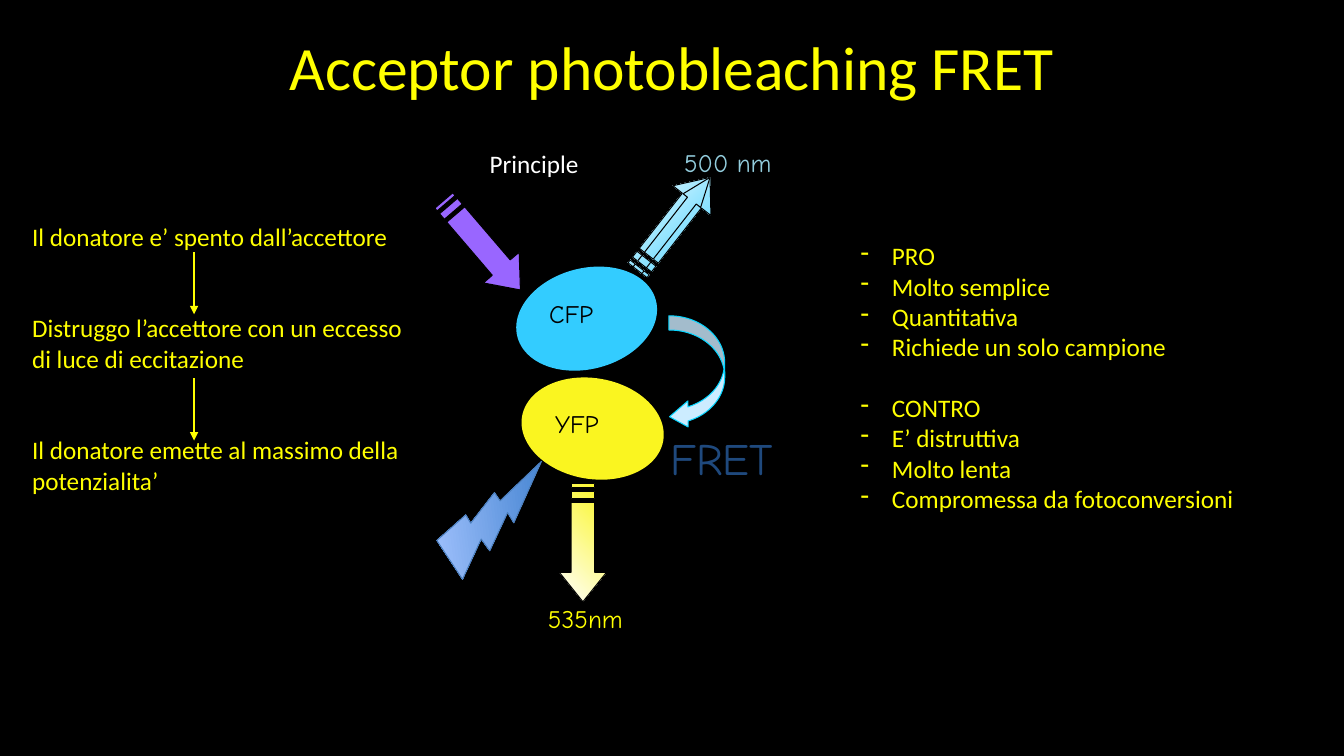
from lxml.etree import SubElement
from pptx import Presentation
from pptx.dml.color import RGBColor
from pptx.enum.shapes import MSO_CONNECTOR, MSO_SHAPE
from pptx.enum.text import PP_ALIGN
from pptx.oxml.ns import qn
from pptx.util import Cm, Pt

BLACK = RGBColor(0x00, 0x00, 0x00)
WHITE = RGBColor(0xFF, 0xFF, 0xFF)
YELLOW = RGBColor(0xFF, 0xFF, 0x00)
YFP_YELLOW = RGBColor(0xFA, 0xF5, 0x20)
CFP_CYAN = RGBColor(0x33, 0xCC, 0xFF)
PALE_CYAN = RGBColor(0xCC, 0xEC, 0xFF)
EDGE_CYAN = RGBColor(0x07, 0xD5, 0xFF)
EMISSION_CYAN = RGBColor(0x93, 0xCD, 0xDD)
VIOLET = RGBColor(0x99, 0x66, 0xFF)
NAVY = RGBColor(0x1F, 0x49, 0x7D)
BOLT_DARK = RGBColor(0x3F, 0x80, 0xCE)
BOLT_LIGHT = RGBColor(0xA4, 0xC4, 0xFF)
BOLT_EDGE = RGBColor(0x4B, 0x7E, 0xBC)
BODY_FONT = "Calibri"
LABEL_FONT = "Comic Neue"
BLANK_LINE = 22  # points taken by one line of 18 pt text

STEPS = [
    "Il donatore e’ spento dall’accettore",
    "Distruggo l’accettore con un eccesso di luce di eccitazione",
    "Il donatore emette al massimo della potenzialita’",
]
PROS = ["PRO", "Molto semplice", "Quantitativa", "Richiede un solo campione"]
CONS = ["CONTRO", "E’ distruttiva", "Molto lenta", "Compromessa da fotoconversioni"]


def add_text(slide, box, lines, color=YELLOW, font=BODY_FONT, size=18,
             align=PP_ALIGN.LEFT, gaps=None, dashed=False):
    """Write lines into box (cm); gaps maps a line index to its space before."""
    frame = slide.shapes.add_textbox(*map(Cm, box)).text_frame
    frame.word_wrap = True
    for index, line in enumerate(lines):
        paragraph = frame.paragraphs[0] if index == 0 else frame.add_paragraph()
        paragraph.alignment = align
        if gaps and index in gaps:
            paragraph.space_before = Pt(gaps[index])
        if dashed:
            properties = paragraph._p.get_or_add_pPr()
            properties.set("marL", str(Cm(0.79)))
            properties.set("indent", str(Cm(-0.79)))
            SubElement(properties, qn("a:buChar")).set("char", "-")
        run = paragraph.add_run()
        run.text = line
        run.font.name = font
        run.font.size = Pt(size)
        run.font.color.rgb = color


def paint(shape, fill, edge=None):
    shape.shadow.inherit = False
    shape.fill.solid()
    shape.fill.fore_color.rgb = fill
    if edge is None:
        shape.line.fill.background()
    else:
        shape.line.color.rgb = edge
        shape.line.width = Pt(0.75)


def paint_gradient(shape, start, end, clockwise, turns_with_shape):
    shape.fill.gradient()
    shape.fill.gradient_angle = 360 - clockwise
    for stop, color in zip(shape.fill.gradient_stops, (start, end)):
        stop.color.rgb = color
    gradient = shape._element.spPr.find(qn("a:gradFill"))
    gradient.set("rotWithShape", str(int(turns_with_shape)))


def add_striped_arrow(slide, center_x, center_y, thickness, rotation):
    """Draw a right arrow with two tail stripes, then turn it about its centre."""
    length = 2.97
    left, top = center_x - length / 2, center_y - thickness / 2

    def at(along, across):
        return Cm(left + along * length), Cm(top + across * thickness)

    contours = [[(5 / 32, 0.25), (0.75, 0.25), (0.75, 0), (1, 0.5),
                 (0.75, 1), (0.75, 0.75), (5 / 32, 0.75)]]
    for start, end in ((2 / 32, 4 / 32), (0, 1 / 32)):
        contours.append([(start, 0.25), (end, 0.25), (end, 0.75), (start, 0.75)])

    builder = slide.shapes.build_freeform(*at(*contours[0][0]))
    for index, contour in enumerate(contours):
        if index:
            builder.move_to(*at(*contour[0]))
        builder.add_line_segments([at(*point) for point in contour[1:]], close=True)
    arrow = builder.convert_to_shape()
    arrow.rotation = rotation
    return arrow


def add_title(slide, box):
    add_text(slide, box, ["Acceptor photobleaching FRET"], size=44,
             align=PP_ALIGN.CENTER)


def add_steps(slide, box):
    left, top = box[:2]
    add_text(slide, box, STEPS, gaps={1: 2 * BLANK_LINE, 2: 2 * BLANK_LINE})
    for step in range(len(STEPS) - 1):
        x, y = left + 4.33, top + 0.91 + step * 3.18
        arrow = slide.shapes.add_connector(
            MSO_CONNECTOR.STRAIGHT, Cm(x), Cm(y), Cm(x), Cm(y + 1.57))
        arrow.line.color.rgb = YELLOW
        arrow.line.width = Pt(2)
        SubElement(arrow.line._get_or_add_ln(), qn("a:tailEnd")).set("type", "triangle")
        SubElement(arrow._element.spPr, qn("a:effectLst"))


def add_fret_diagram(slide, box):
    left, top = box[:2]

    def place(x, y, width, height):
        return left + x, top + y, width, height

    def preset(kind, x, y, width, height, rotation):
        shape = slide.shapes.add_shape(kind, *map(Cm, place(x, y, width, height)))
        shape.rotation = rotation
        return shape

    add_text(slide, place(1.19, 0.03, 3.02, 1.02), ["Principle"], WHITE)

    proteins = [("CFP", 2.08, 3.18, 345.2, CFP_CYAN), ("YFP", 2.23, 5.95, 9.8, YFP_YELLOW)]
    for name, x, y, rotation, color in proteins:
        paint(preset(MSO_SHAPE.OVAL, x, y, 3.61, 2.54, rotation), color)
        add_text(slide, place(x + 0.61, y + 0.63, 2, 1.27), [name], BLACK, LABEL_FONT)

    excitation = add_striped_arrow(slide, left + 1.25, top + 2.6, 1.19, 49.4)
    paint(excitation, VIOLET, BLACK)

    transfer = preset(MSO_SHAPE.CURVED_UP_ARROW, 5.23, 5.11, 2.87, 1.4, 269.6)
    transfer._element.spPr.find(qn("a:xfrm")).set("flipH", "1")
    for index, value in enumerate((0.255, 0.468, 0.333)):
        transfer.adjustments[index] = value
    paint(transfer, PALE_CYAN, EDGE_CYAN)
    add_text(slide, place(5.74, 7.16, 3.38, 1.6), ["FRET"], NAVY, LABEL_FONT, 32)

    yfp_emission = add_striped_arrow(slide, left + 3.79, top + 10.1, 1.19, 90)
    paint(yfp_emission, YFP_YELLOW, BLACK)
    paint_gradient(yfp_emission, WHITE, YFP_YELLOW, 315, False)
    add_text(slide, place(2.66, 11.51, 2.8, 1.02), ["535nm"], YELLOW, LABEL_FONT)

    for thickness in (1.22, 0.56):
        cfp_emission = add_striped_arrow(slide, left + 6.08, top + 2.06, thickness, 308)
        paint(cfp_emission, CFP_CYAN, BLACK)
        paint_gradient(cfp_emission, WHITE, CFP_CYAN, 45, False)
    add_text(slide, place(6.09, 0, 2.87, 1.02), ["500 nm"], EMISSION_CYAN, LABEL_FONT)

    bleaching = preset(MSO_SHAPE.LIGHTNING_BOLT, 0.15, 8.13, 2.69, 2.87, 262.6)
    paint(bleaching, BOLT_DARK, BOLT_EDGE)
    paint_gradient(bleaching, BOLT_DARK, BOLT_LIGHT, 270, True)


def add_pros_and_cons(slide, box):
    add_text(slide, box, PROS + CONS, gaps={len(PROS): BLANK_LINE}, dashed=True)


def main():
    presentation = Presentation()
    presentation.slide_width = Cm(33.87)
    presentation.slide_height = Cm(19.05)
    slide = presentation.slides.add_slide(presentation.slide_layouts[6])
    slide.background.fill.solid()
    slide.background.fill.fore_color.rgb = BLACK

    add_title(slide, (4.24, 0.61, 25.4, 2.13))
    add_steps(slide, (0.56, 5.44, 9.83, 7.19))
    add_fret_diagram(slide, (10.9, 3.58, 9.1, 12.5))
    add_pros_and_cons(slide, (21.44, 5.94, 10.41, 7.19))
    presentation.save("out.pptx")


if __name__ == "__main__":
    main()
